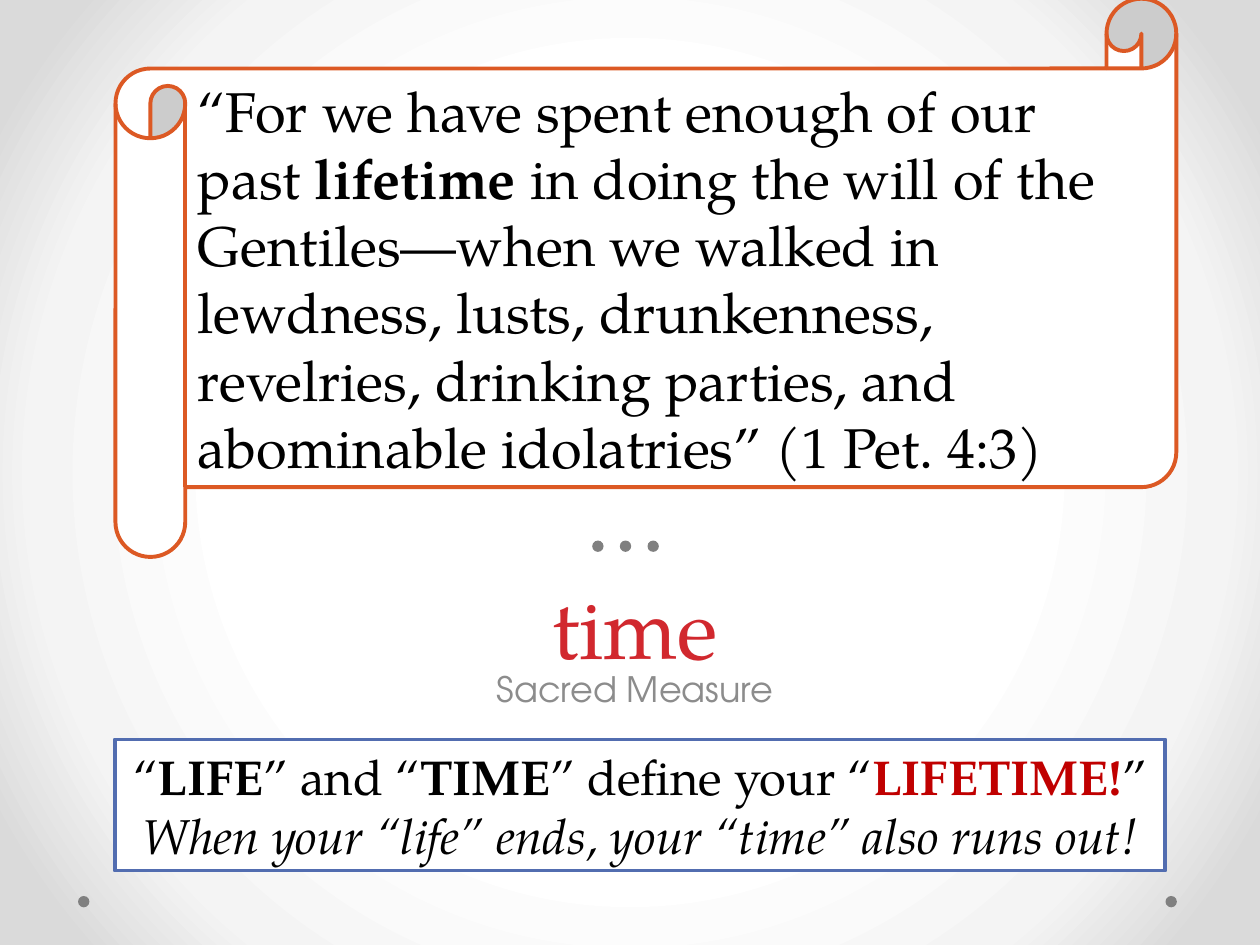
"""Build the "time: Sacred Measure" slide with a scroll quotation and a closing box."""
from lxml import etree
from pptx import Presentation
from pptx.dml.color import RGBColor
from pptx.enum.shapes import MSO_SHAPE as SHAPE
from pptx.enum.text import MSO_ANCHOR as ANCHOR, MSO_AUTO_SIZE as AUTO, PP_ALIGN as ALIGN
from pptx.oxml import parse_xml
from pptx.util import Pt

THEME = {
    "serif": "TeX Gyre Pagella", "sans": "TeX Gyre Adventor",
    "title": 48, "subtitle": 20, "quote": 32, "closing": 28,
    "ink": "000000", "paper": "FFFFFF", "heading": "D1282E", "muted": "8C8C8C",
    "dot": "808080", "scroll": "DC5924", "box": "526DB0", "accent": "C00000",
    "backdrop": [(50, "FFFFFF"), (76, "F4F4F4"), (92, "DADADA")],
}
TITLE = [[("time", "")]]
SUBTITLE = [[("Sacred Measure", "")]]
QUOTE = [[
    ("“For we have spent enough of our past ", ""), ("lifetime", "b"),
    (" in doing the will of the Gentiles—when we walked in lewdness, lusts, drunkenness, "
     "revelries, drinking parties, and abominable idolatries” (1 Pet. 4:3)", ""),
]]
CLOSING = [
    [("“", ""), ("LIFE", "b"), ("” and “", ""), ("TIME", "b"),
     ("” define your “", ""), ("LIFETIME!", "ba"), ("”", "")],
    [("When your “life” ends, your “time” also runs out!", "i")],
]
DOT_SIZE = 6.5
DOTS = [(666, 512), (44.6, 512)] + [(354.2 + i * 15.8, 308.9) for i in (0, 1, -1)]
TITLE_AT = (56.9, 193, 612, 197.3)
SUBTITLE_AT = (56.9, 378, 612, 31.7)
QUOTE_AT = (66, -0.7, 606.2, 319)
CLOSING_AT = (65.5, 422.6, 600.5, 74.9)


def rgb(name):
    return RGBColor.from_string(THEME[name])


def paint_background(s):
    stops = "".join(f'<a:gs pos="{pos * 1000}"><a:srgbClr val="{color}"/></a:gs>'
                    for pos, color in THEME["backdrop"])
    center = " ".join(f'{side}="50000"' for side in "ltrb")
    s.background.fill.solid()
    solid = next(s.element.iter("{*}solidFill"))
    solid.getparent().replace(solid, parse_xml(
        '<a:gradFill xmlns:a="http://schemas.openxmlformats.org/drawingml/2006/main" '
        f'rotWithShape="1"><a:gsLst>{stops}</a:gsLst>'
        f'<a:path path="circle"><a:fillToRect {center}/></a:path></a:gradFill>'))


def place(sp, at):
    sp.left, sp.top, sp.width, sp.height = map(Pt, at)


def add_shape(s, kind, at, fill, line=None):
    sp = s.shapes.add_shape(kind, *map(Pt, at))
    sp.shadow.inherit = False
    sp.fill.solid()
    sp.fill.fore_color.rgb = rgb(fill)
    if line:
        sp.line.color.rgb = rgb(line)
        sp.line.width = Pt(2.25)
    else:
        sp.line.fill.background()
    return sp


def write(sp, paragraphs, size, align, anchor, font="serif", color="ink", wrap=True):
    tf = sp.text_frame
    tf.auto_size, tf.word_wrap, tf.vertical_anchor = AUTO.NONE, wrap, anchor
    for i, runs in enumerate(paragraphs):
        p = tf.add_paragraph() if i else tf.paragraphs[0]
        p.alignment = align
        for text, style in runs:
            r = p.add_run()
            r.text = text
            r.font.name, r.font.size = THEME[font], Pt(THEME[size])
            r.font.bold, r.font.italic = "b" in style, "i" in style
            r.font.color.rgb = rgb("accent" if "a" in style else color)


def main():
    prs = Presentation()
    prs.slide_width, prs.slide_height = Pt(720), Pt(540)
    s = prs.slides.add_slide(prs.slide_layouts[5])
    paint_background(s)
    for x, y in DOTS:
        add_shape(s, SHAPE.OVAL, (x, y, DOT_SIZE, DOT_SIZE), "dot")
    title = s.shapes.title
    place(title, TITLE_AT)
    write(title, TITLE, "title", ALIGN.CENTER, ANCHOR.BOTTOM, color="heading")
    subtitle = s.shapes.add_textbox(*map(Pt, SUBTITLE_AT))
    write(subtitle, SUBTITLE, "subtitle", ALIGN.CENTER, ANCHOR.TOP, "sans", "muted")
    scroll = add_shape(s, SHAPE.HORIZONTAL_SCROLL, QUOTE_AT, "paper", "scroll")
    write(scroll, QUOTE, "quote", ALIGN.LEFT, ANCHOR.MIDDLE)
    box = add_shape(s, SHAPE.RECTANGLE, CLOSING_AT, "paper", "box")
    write(box, CLOSING, "closing", ALIGN.CENTER, ANCHOR.MIDDLE, wrap=False)
    prs.save("out.pptx")


if __name__ == "__main__":
    main()
